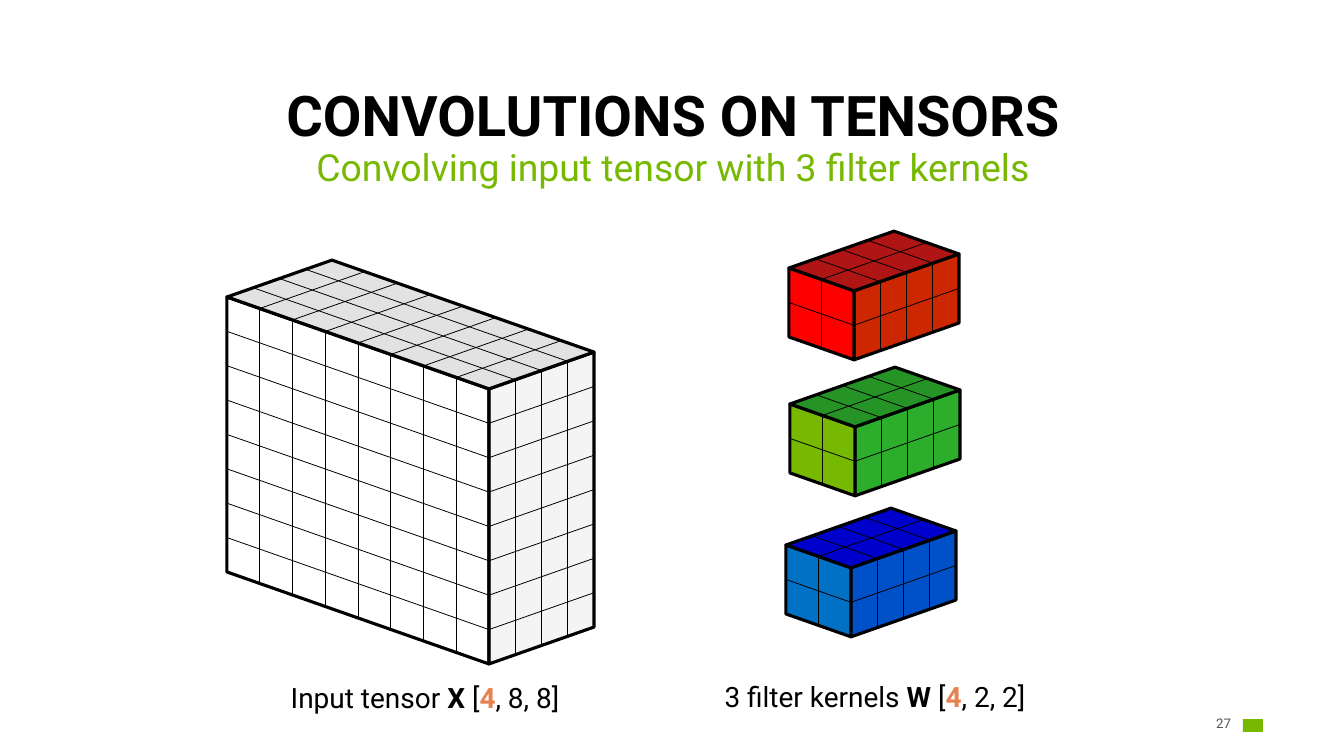
import math
from dataclasses import dataclass

from lxml import etree
from pptx import Presentation
from pptx.dml.color import RGBColor
from pptx.enum.shapes import MSO_CONNECTOR, MSO_SHAPE
from pptx.enum.text import MSO_ANCHOR, MSO_AUTO_SIZE, PP_ALIGN
from pptx.oxml.ns import qn
from pptx.util import Pt

PARALLELOGRAM, RECTANGLE = MSO_SHAPE.PARALLELOGRAM, MSO_SHAPE.RECTANGLE
STRAIGHT = MSO_CONNECTOR.STRAIGHT
TOP, MIDDLE, BOTTOM = MSO_ANCHOR.TOP, MSO_ANCHOR.MIDDLE, MSO_ANCHOR.BOTTOM
CENTER, RIGHT = PP_ALIGN.CENTER, PP_ALIGN.RIGHT
NO_AUTOFIT = MSO_AUTO_SIZE.NONE
PX = 914400 / 112
SLOPE = 0.351
DEPTH = 105
DEPTH_CELLS = 4


@dataclass(frozen=True)
class Theme:
    """Hold the font, colours and type sizes of the slide."""
    font: str = "Roboto"
    ink: str = "000000"
    brand: str = "76B900"
    accent: str = "E68250"
    muted: str = "505050"
    title: float = 36
    subtitle: float = 24
    caption: float = 18
    number: float = 8.5
    edge: float = 2
    grid: float = 0.5


THEME = Theme()
TENSOR = {"front": ("FFFFFF", 62), "side": ("E1E1E1", 36), "top": ("D1D1D1", 62)}
KERNELS = [
    (789, 268, {"side": "CC2700", "front": "FF0000", "top": "AF1515"}),
    (790, 404, {"side": "2CAE2C", "front": "76B900", "top": "259325"}),
    (786, 545, {"side": "0051C8", "front": "0071C5", "top": "0000CC"}),
]


def emu(*lengths):
    """Turn px lengths into EMU."""
    return [round(v * PX) for v in lengths]


def set_text(sp, runs, size, align=CENTER, **frame):
    """Fill a shape with one paragraph of (text, colour, bold) runs."""
    tf = sp.text_frame
    for name, value in frame.items():
        setattr(tf, name, value)
    p = tf.paragraphs[0]
    for name, value in {"alignment": align, "line_spacing": 0.9,
                        "space_before": Pt(0)}.items():
        setattr(p, name, value)
    for text, color, bold in runs:
        r = p.add_run()
        r.text = text
        for name, value in {"name": THEME.font, "size": Pt(size), "bold": bold}.items():
            setattr(r.font, name, value)
        r.font.color.rgb = RGBColor.from_string(color)
    return p


def place(sp, box):
    """Move a placeholder to a px box."""
    for name, value in zip(("left", "top", "width", "height"), emu(*box)):
        setattr(sp, name, value)


def add_heading(s, title_box, subtitle_box):
    """Fill the title and body placeholders."""
    title, body = s.shapes.title, s.placeholders[1]
    place(title, title_box)
    place(body, subtitle_box)
    set_text(title, [("CONVOLUTIONS ON TENSORS", THEME.ink, True)], THEME.title,
             vertical_anchor=BOTTOM, auto_size=NO_AUTOFIT)
    pPr = body.text_frame.paragraphs[0]._p.get_or_add_pPr()
    pPr.set("marL", "0")
    pPr.set("indent", "0")
    etree.SubElement(pPr, qn("a:buNone"))
    set_text(body, [("Convolving input tensor with 3 filter kernels", THEME.brand, False)],
             THEME.subtitle, vertical_anchor=TOP, auto_size=NO_AUTOFIT)


def add_face(grp, center, size, adj, fill, rotation, flips=()):
    """Add one outlined parallelogram around a centre point."""
    (cx, cy), (w, h) = center, size
    color, alpha = fill if isinstance(fill, tuple) else (fill, None)
    sp = grp.shapes.add_shape(PARALLELOGRAM, *emu(cx - w / 2, cy - h / 2, w, h))
    sp.shadow.inherit = False
    sp.adjustments[0] = adj
    sp.rotation = rotation
    for flip in flips:
        sp._element.spPr.xfrm.set(flip, "1")
    sp.fill.solid()
    sp.fill.fore_color.rgb = RGBColor.from_string(color)
    if alpha:
        clr = sp._element.spPr.find(qn("a:solidFill"))[0]
        etree.SubElement(clr, qn("a:alpha")).set("val", str(alpha * 1000))
    sp.line.color.rgb = RGBColor.from_string(THEME.ink)
    sp.line.width = Pt(THEME.edge)


def add_grid_line(grp, start, end):
    """Draw one thin grid line between two px points."""
    cxn = grp.shapes.add_connector(STRAIGHT, *emu(*start, *end))
    cxn.line.color.rgb = RGBColor.from_string(THEME.ink)
    cxn.line.width = Pt(THEME.grid)
    etree.SubElement(cxn._element.spPr, qn("a:effectLst"))


def add_block(s, x, y, width, height, cells, fills):
    """Draw a gridded block whose front face starts at its top left corner."""
    grp = s.shapes.add_group_shape()

    def point(u, v, d):
        return (x + width * u + DEPTH * d,
                y + SLOPE * (width * u - DEPTH * d) + height * v)

    slant = math.hypot(1, SLOPE)
    top_h = 2 * SLOPE * DEPTH / slant
    overhang = DEPTH * (1 - SLOPE ** 2) / slant
    faces = {
        "front": (point(0.5, 0.5, 0), (height + SLOPE * width, width), SLOPE, 270,
                  ("flipH", "flipV")),
        "side": (point(1, 0.5, 0.5), (height + SLOPE * DEPTH, DEPTH), SLOPE, 90,
                 ("flipV",)),
        "top": (point(0.5, 0, 0.5), (width * slant + overhang, top_h),
                overhang / top_h, math.degrees(math.atan(SLOPE)), ()),
    }
    for name, fill in fills.items():
        center, size, adj, rotation, flips = faces[name]
        add_face(grp, center, size, adj, fill, rotation, flips)
    for i in range(1, cells):
        t = i / cells
        add_grid_line(grp, point(t, 0, 0), point(t, 1, 0))
        add_grid_line(grp, point(t, 0, 0), point(t, 0, 1))
        add_grid_line(grp, point(0, t, 0), point(1, t, 0))
        add_grid_line(grp, point(1, t, 0), point(1, t, 1))
    for i in range(1, DEPTH_CELLS):
        t = i / DEPTH_CELLS
        add_grid_line(grp, point(1, 0, t), point(1, 1, t))
        add_grid_line(grp, point(0, 0, t), point(1, 0, t))


def add_caption(s, box, label, symbol, rest):
    """Write a caption with a bold symbol and a highlighted channel count."""
    runs = [(label, THEME.ink, False), (symbol, THEME.ink, True), (" [", THEME.ink, False),
            (str(DEPTH_CELLS), THEME.accent, True), (rest, THEME.ink, False)]
    set_text(s.shapes.add_textbox(*emu(*box)), runs, THEME.caption,
             vertical_anchor=MIDDLE, word_wrap=False)


def add_footer(s, x, y, width, height):
    """Add the page number and a plain mark at the right of the footer."""
    margins = dict.fromkeys(
        ("margin_left", "margin_right", "margin_top", "margin_bottom"), 0)
    set_text(s.shapes.add_textbox(*emu(x, y, 35, height)), [("27", THEME.muted, False)],
             THEME.number, RIGHT, vertical_anchor=MIDDLE, word_wrap=True, **margins)
    mark = s.shapes.add_shape(RECTANGLE, *emu(x + width - 20, y + 5, 20, 13))
    mark.shadow.inherit = False
    mark.fill.solid()
    mark.fill.fore_color.rgb = RGBColor.from_string(THEME.brand)
    mark.line.fill.background()


def main():
    """Build the slide and save it."""
    prs = Presentation()
    prs.slide_width, prs.slide_height = emu(1344, 756)
    s = prs.slides.add_slide(prs.slide_layouts[1])
    add_footer(s, 1196, 714, 67, 20)
    add_block(s, 227, 297, 262, 275, 8, TENSOR)
    add_heading(s, (62, 81, 1222, 73), (62, 144, 1222, 64))
    for x, y, fills in KERNELS:
        add_block(s, x, y, 65, 69, 2, fills)
    add_caption(s, (268, 679, 314, 41), "Input tensor ", "X", ", 8, 8]")
    add_caption(s, (697, 678, 356, 41), "3 filter kernels ", "W", ", 2, 2]")
    prs.save("out.pptx")


if __name__ == "__main__":
    main()
